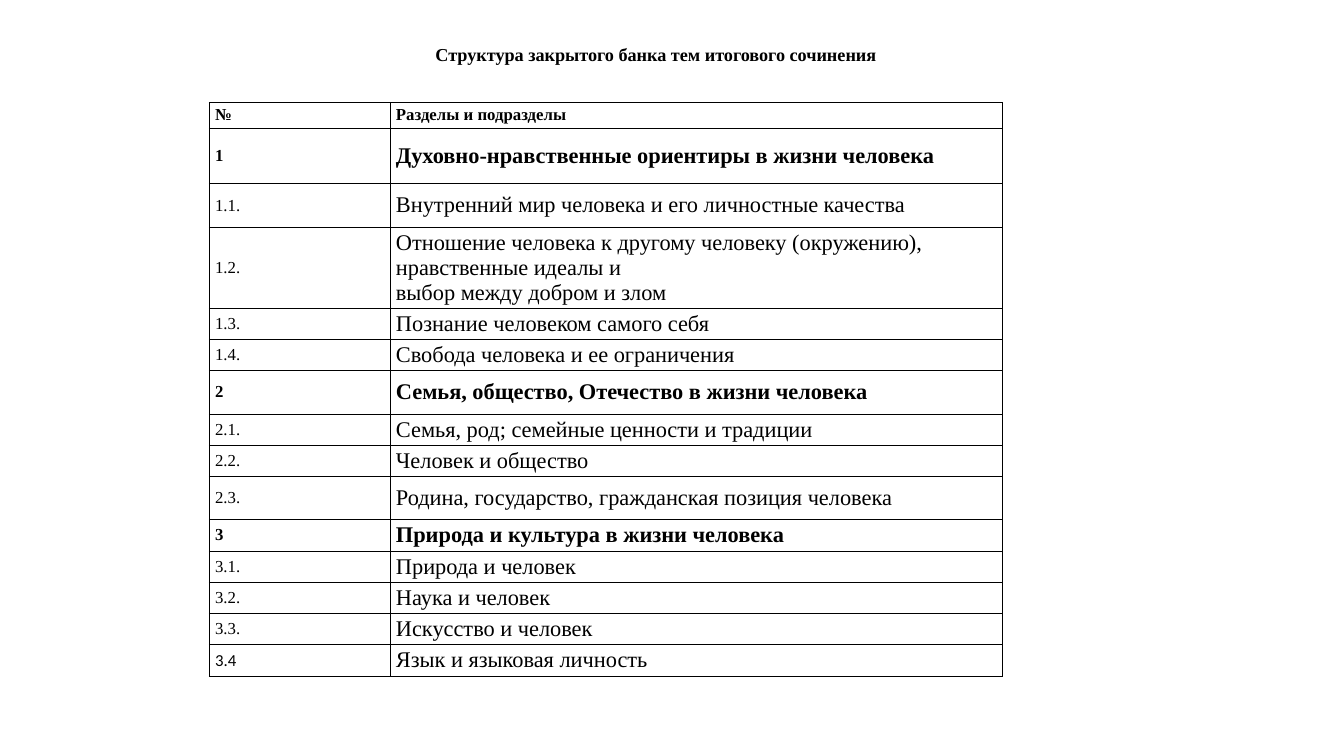
import pptx
import pptx.dml.color
import pptx.enum.text
import pptx.oxml
import pptx.oxml.ns
import pptx.util

Cm = pptx.util.Cm
Pt = pptx.util.Pt
BLACK = pptx.dml.color.RGBColor(0, 0, 0)
MIDDLE = pptx.enum.text.MSO_ANCHOR.MIDDLE

TITLE = "Структура закрытого банка тем итогового сочинения"

# Row heights in cm: header, one line, roomy, section, three lines
HEAD, LINE, ROOMY, TALL, TRIPLE = 0.63, 0.78, 1.09, 1.41, 2.03
ROWS = [
    ("№", "Разделы и подразделы", HEAD),
    ("1", "Духовно-нравственные ориентиры в жизни человека", TALL),
    ("1.1.", "Внутренний мир человека и его личностные качества", ROOMY),
    ("1.2.", "Отношение человека к другому человеку (окружению), "
             "нравственные идеалы и\nвыбор между добром и злом", TRIPLE),
    ("1.3.", "Познание человеком самого себя", LINE),
    ("1.4.", "Свобода человека и ее ограничения", LINE),
    ("2", "Семья, общество, Отечество в жизни человека", ROOMY),
    ("2.1.", "Семья, род; семейные ценности и традиции", LINE),
    ("2.2.", "Человек и общество", LINE),
    ("2.3.", "Родина, государство, гражданская позиция человека", ROOMY),
    ("3", "Природа и культура в жизни человека", LINE),
    ("3.1.", "Природа и человек", LINE),
    ("3.2.", "Наука и человек", LINE),
    ("3.3.", "Искусство и человек", LINE),
    ("3.4", "Язык и языковая личность", LINE),
]


class Page:
    font = "Times New Roman"
    color = BLACK
    edge = Pt(0.5)

    def __init__(self, deck):
        self.slide = deck.slides.add_slide(deck.slide_layouts[5])

    def text(self, frame, words, size, bold, font=None):
        para = frame.paragraphs[0]
        para.text = words
        para.alignment = pptx.enum.text.PP_ALIGN.LEFT
        for run in para.runs:
            run.font.name = font or self.font
            run.font.size = Pt(size)
            run.font.bold = bold
            run.font.color.rgb = self.color

    def title(self, words, left, top, width, height):
        shape = self.slide.shapes.title
        shape.left, shape.top = Cm(left), Cm(top)
        shape.width, shape.height = Cm(width), Cm(height)
        frame = shape.text_frame
        frame.word_wrap = False
        frame.auto_size = pptx.enum.text.MSO_AUTO_SIZE.NONE
        frame.vertical_anchor = MIDDLE
        self.text(frame, words, 13, True)

    def border(self, cell):
        props = cell._tc.get_or_add_tcPr()
        for side in "LRTB":
            props.append(pptx.oxml.parse_xml(
                f'<a:ln{side} {pptx.oxml.ns.nsdecls("a")} w="{self.edge}">'
                f'<a:solidFill><a:srgbClr val="{self.color}"/></a:solidFill>'
                f'</a:ln{side}>'))

    def cell(self, cell, words, size, bold, font=None):
        cell.margin_left = cell.margin_right = Cm(0.15)
        cell.margin_top = cell.margin_bottom = Cm(0.08)
        cell.vertical_anchor = MIDDLE
        self.border(cell)
        cell.fill.background()
        self.text(cell.text_frame, words, size, bold, font)

    def table(self, rows, left, top, widths):
        high = sum(row[2] for row in rows)
        grid = self.slide.shapes.add_table(
            len(rows), len(widths), Cm(left), Cm(top),
            Cm(sum(widths)), Cm(high)).table
        grid.first_row = grid.horz_banding = False
        for col, width in zip(grid.columns, widths):
            col.width = Cm(width)
        for i, (num, topic, height) in enumerate(rows):
            grid.rows[i].height = Cm(height)
            bold = "." not in num
            # The last number is set in another font
            font = "Calibri" if i == len(rows) - 1 else None
            self.cell(grid.cell(i, 0), num, 12, bold, font)
            self.cell(grid.cell(i, 1), topic, 16 if i else 12, bold)


def main():
    deck = pptx.Presentation()
    deck.slide_width, deck.slide_height = Cm(33.87), Cm(19.05)
    page = Page(deck)
    # Heading
    page.title(TITLE, 10.72, 0.96, 11.8, 0.8)
    # Sections and topics
    page.table(ROWS, 5.27, 2.59, (4.56, 15.44))
    deck.save("out.pptx")


if __name__ == "__main__":
    main()
